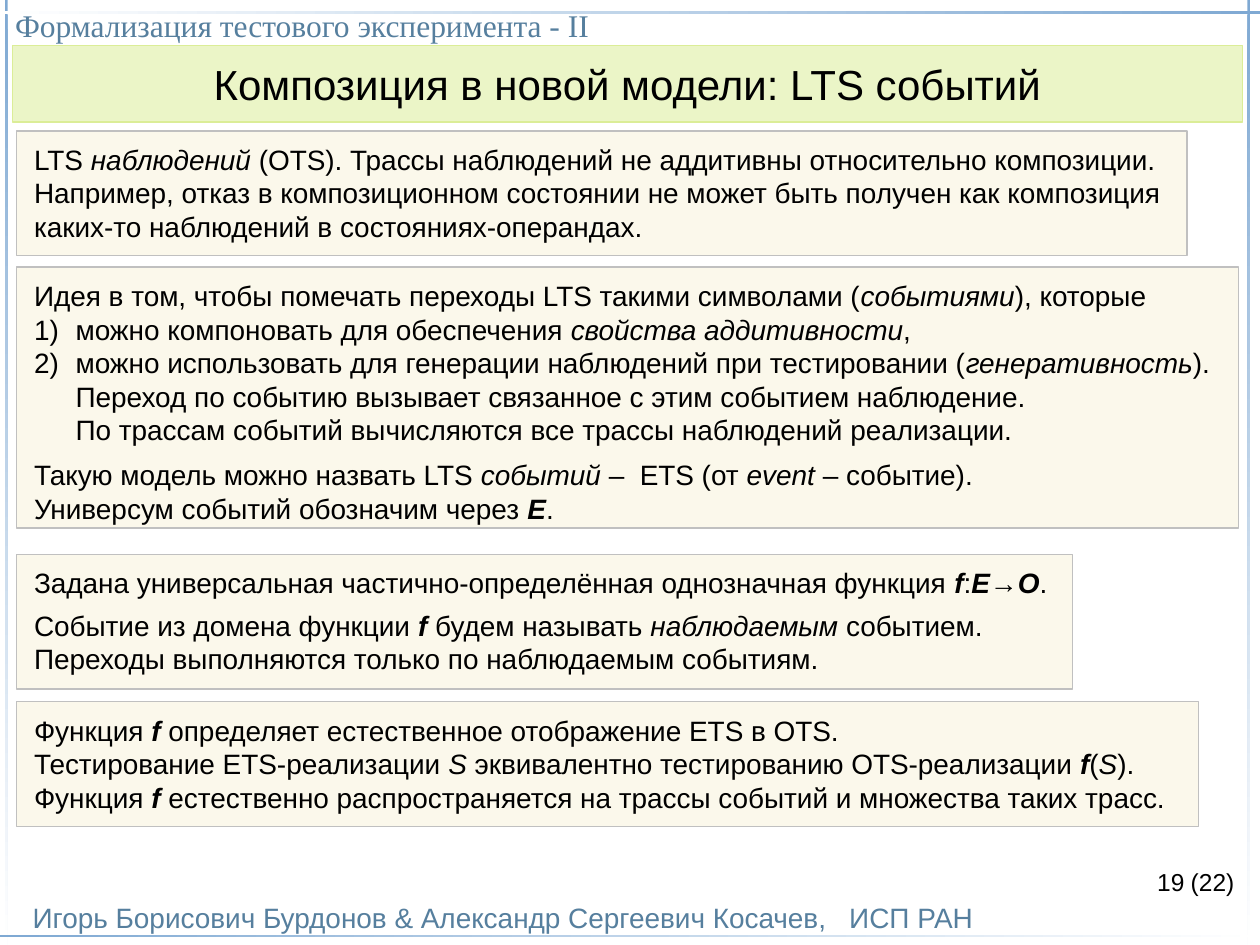
from lxml import etree
from pptx import Presentation
from pptx.dml.color import RGBColor
from pptx.enum.shapes import MSO_SHAPE
from pptx.enum.text import MSO_ANCHOR, MSO_AUTO_SIZE, PP_ALIGN
from pptx.oxml.ns import qn
from pptx.util import Inches, Pt

RECT = MSO_SHAPE.RECTANGLE
TOP, MID, LOW = MSO_ANCHOR.TOP, MSO_ANCHOR.MIDDLE, MSO_ANCHOR.BOTTOM
FIT, FIXED = MSO_AUTO_SIZE.SHAPE_TO_FIT_TEXT, MSO_AUTO_SIZE.NONE
LEFT, MIDDLE, RIGHT = PP_ALIGN.LEFT, PP_ALIGN.CENTER, PP_ALIGN.RIGHT

BLACK = RGBColor(0x00, 0x00, 0x00)
WHITE = RGBColor(0xFF, 0xFF, 0xFF)
STEEL = RGBColor(0x56, 0x7F, 0x9E)
SKY = RGBColor(0x7F, 0xA9, 0xD3)
LIME = RGBColor(0xEB, 0xF5, 0xC7)
GREEN = RGBColor(0xDB, 0xED, 0x97)
CREAM = RGBColor(0xFB, 0xF8, 0xEB)
GRAY = RGBColor(0xC0, 0xC0, 0xC0)

WIDE, HIGH, THIN = 10, 7.5, 0.02
EDGE = 0.13
HANG = 0.33

HEAD = "Формализация тестового эксперимента - II"
TITLE = "Композиция в новой модели: LTS событий"
FOOT = "Игорь Борисович Бурдонов & Александр Сергеевич Косачев,   ИСП РАН"

TRACES = [
    ("LTS *наблюдений* (OTS). Трассы наблюдений не аддитивны относительно композиции.", {}),
    ("Например, отказ в композиционном состоянии не может быть получен как композиция", {}),
    ("каких-то наблюдений в состояниях-операндах.", {}),
]
IDEA = [
    ("Идея в том, чтобы помечать переходы LTS такими символами (*событиями*), которые", {}),
    ("можно компоновать для обеспечения *свойства аддитивности*,", {"kind": "number"}),
    ("можно использовать для генерации наблюдений при тестировании (*генеративность*).",
     {"kind": "number"}),
    ("Переход по событию вызывает связанное с этим событием наблюдение.", {"kind": "inner"}),
    ("По трассам событий вычисляются все трассы наблюдений реализации.", {"kind": "inner"}),
    ("Такую модель можно назвать LTS *событий* –  ETS (от *event *– событие).", {"gap": 6.5}),
    ("Универсум событий обозначим через #E#.", {}),
]
DOMAIN = [
    ("Задана универсальная частично-определённая однозначная функция #f#:#E#→#O#.", {}),
    ("Событие из домена функции #f# будем называть *наблюдаемым* событием.", {"gap": 5}),
    ("Переходы выполняются только по наблюдаемым событиям.", {}),
]
MAPPING = [
    ("Функция #f# определяет естественное отображение ETS в OTS.", {}),
    ("Тестирование ETS-реализации *S* эквивалентно тестированию OTS-реализации #f#(*S*).", {}),
    ("Функция #f# естественно распространяется на трассы событий и множества таких трасс.", {}),
]


def write(para, text, size=16, face="Arial", color=BLACK, align=LEFT, kind="plain", gap=0):
    """Fill a paragraph; *...* marks italic and #...# marks bold italic."""
    props = para._p.get_or_add_pPr()
    props.set("marL", str(Inches(0 if kind == "plain" else HANG)))
    props.set("indent", str(Inches(-HANG if kind == "number" else 0)))
    if kind == "number":
        etree.SubElement(props, qn("a:buFont"), typeface="+mj-lt")
        etree.SubElement(props, qn("a:buAutoNum"), type="arabicParenR")
    else:
        etree.SubElement(props, qn("a:buNone"))
    para.alignment = align
    para.space_before = Pt(gap)
    for i, chunk in enumerate(text.split("#")):
        for j, part in enumerate(chunk.split("*")):
            if part:
                run = para.add_run()
                run.text = part
                font = run.font
                font.size, font.name = Pt(size), face
                font.color.rgb = color
                font.bold = i % 2 == 1
                font.italic = i % 2 == 1 or j % 2 == 1


def frame(shape, pad=(0, 0), anchor=TOP, wrap=True, fit=FIXED):
    """Set the margins and flow of a shape's text and return its frame."""
    area = shape.text_frame
    area.margin_left = area.margin_right = Inches(pad[0])
    area.margin_top = area.margin_bottom = Inches(pad[1])
    area.vertical_anchor = anchor
    area.word_wrap = wrap
    area.auto_size = fit
    return area


def place(shape, box):
    """Move and size a shape to a box in inches."""
    shape.left, shape.top, shape.width, shape.height = map(Inches, box)


def paint(shape, fill, line):
    """Give a shape a solid fill and a thin outline."""
    shape.fill.solid()
    shape.fill.fore_color.rgb = fill
    shape.line.color.rgb = line
    shape.line.width = Pt(0.75)


def rule(slide, box, angle):
    """Draw a thin bar that fades from blue to white."""
    bar = slide.shapes.add_shape(RECT, *map(Inches, box))
    bar.shadow.inherit = False
    bar.line.fill.background()
    bar.fill.gradient()
    bar.fill.gradient_angle = angle
    for stop, color in zip(bar.fill.gradient_stops, (SKY, WHITE)):
        stop.color.rgb = color


def label(slide, box, text, pad=(0, 0), anchor=TOP, wrap=True, **style):
    """Add a single line of free text."""
    area = frame(slide.shapes.add_textbox(*map(Inches, box)), pad, anchor, wrap)
    write(area.paragraphs[0], text, **style)


def banner(shape, box):
    """Format the slide title as a green band."""
    place(shape, box)
    paint(shape, LIME, GREEN)
    area = frame(shape, (0, 0.1), MID)
    write(area.paragraphs[0], TITLE, size=24, align=MIDDLE)


def panel(shape, lines):
    """Format a shape as a cream panel holding the given lines."""
    paint(shape, CREAM, GRAY)
    area = frame(shape, (0.14, 0.09), wrap=False, fit=FIT)
    for i, (text, style) in enumerate(lines):
        para = area.add_paragraph() if i else area.paragraphs[0]
        write(para, text, **style)


def block(slide, box, lines):
    """Add a panel of plain text in a box."""
    shape = slide.shapes.add_shape(RECT, *map(Inches, box))
    shape.shadow.inherit = False
    panel(shape, lines)


def border(slide):
    """Draw the four fading rules and the running texts."""
    for x in (0.04, 9.9):
        rule(slide, (x, 0, THIN, HIGH), 270)
    rule(slide, (0, 0.09, WIDE, THIN), 180)
    rule(slide, (0, 7.42, WIDE, THIN), 0)
    label(slide, (0.26, 7.14, 7.5, 0.27), FOOT, anchor=LOW, wrap=False, color=STEEL)
    label(slide, (0.12, 0.05, 9.73, 0.3), HEAD, size=18, face="Times New Roman", color=STEEL)
    label(slide, (9.45, 6.88, 0.35, 0.24), "(22)", wrap=False, size=14)
    label(slide, (7.17, 6.83, 2.33, 0.52), "19", pad=(0.1, 0.05), size=14, align=RIGHT)


def main():
    """Build and save the slide."""
    deck = Presentation()
    deck.slide_width, deck.slide_height = Inches(WIDE), Inches(HIGH)
    slide = deck.slides.add_slide(deck.slide_layouts[1])
    border(slide)
    banner(slide.shapes.title, (0.1, 0.36, 9.76, 0.61))
    body = slide.placeholders[1]
    place(body, (EDGE, 2.12, 9.7, 2.17))
    panel(body, IDEA)
    block(slide, (EDGE, 1.04, 9.29, 0.99), TRACES)
    block(slide, (EDGE, 4.4, 8.38, 1.07), DOMAIN)
    block(slide, (EDGE, 5.57, 9.38, 0.99), MAPPING)
    deck.save("out.pptx")


if __name__ == "__main__":
    main()
